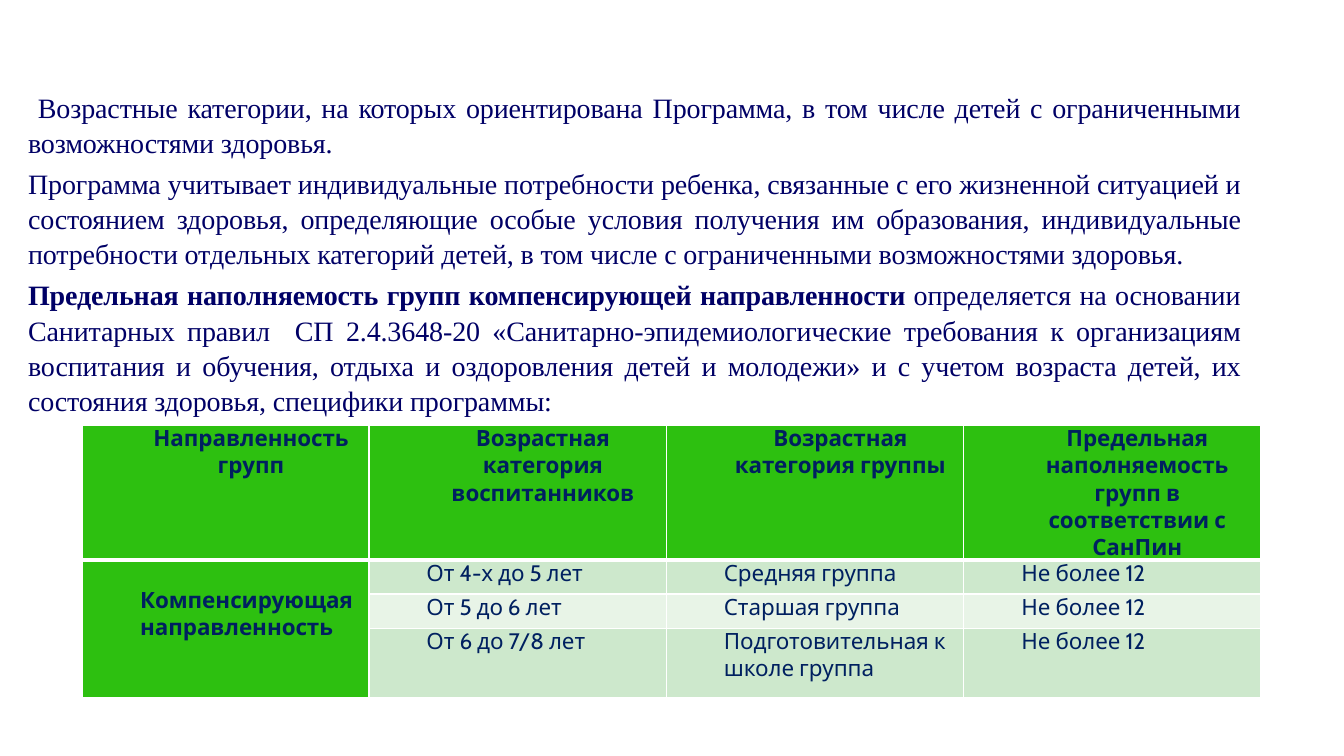
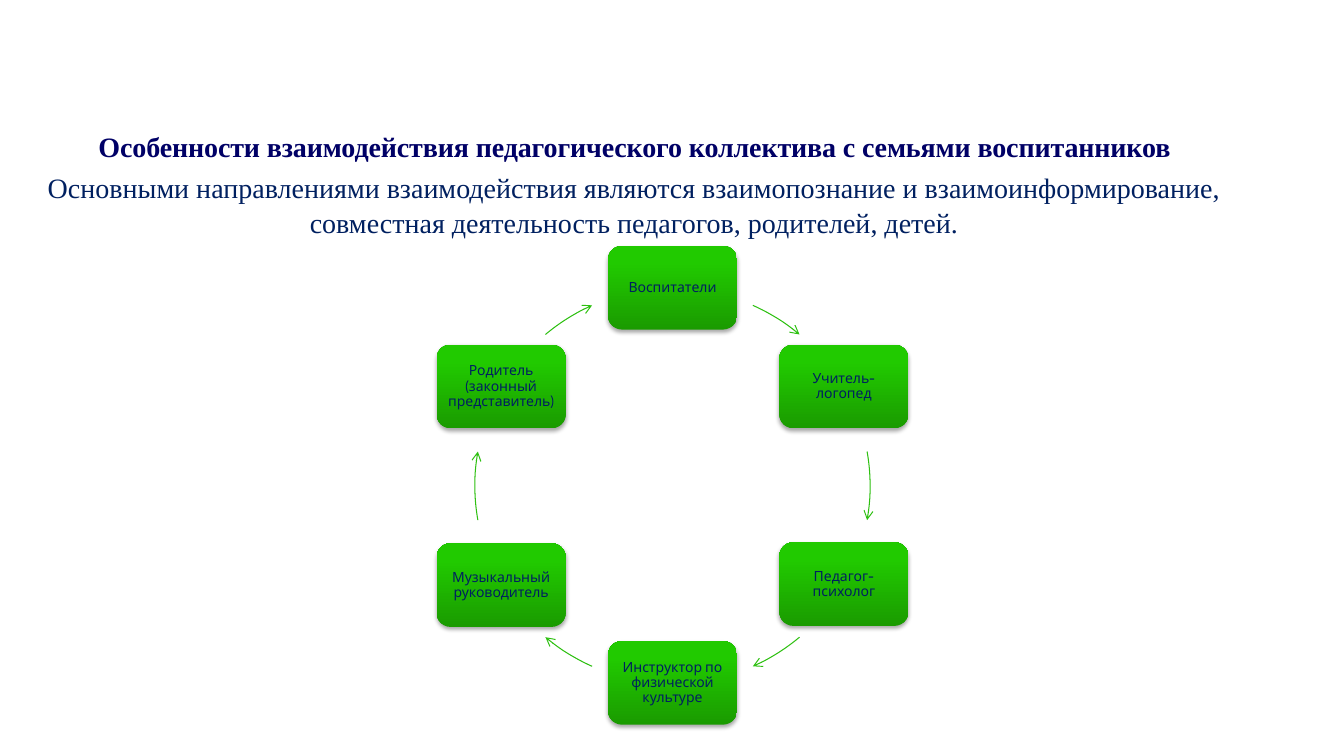
from math import cos, radians, sin

from lxml import etree
from pptx import Presentation
from pptx.dml.color import RGBColor
from pptx.enum.shapes import MSO_SHAPE as SHAPE
from pptx.enum.text import MSO_ANCHOR as ANCHOR, PP_ALIGN as ALIGN
from pptx.oxml import parse_xml
from pptx.oxml.ns import nsdecls, qn
from pptx.util import Pt

PX = 9144  # 100 px to the inch
COLORS = {name: RGBColor.from_string(value) for name, value in {
    "navy": "000066", "ink": "002060", "green": "2DC010",
    "bright": "21CA00", "dark": "1A9B00",
    "band": "CDE8CC", "pale": "E8F4E7",
}.items()}
SERIF, SANS = "Times New Roman", "Cabin"


def set_font(font, name, size, color, bold=False):
    font.name, font.size, font.bold = name, Pt(size), bold
    font.color.rgb = COLORS[color]


def add_body(s, top, height, paragraphs):
    """Add body text; each paragraph is (alignment, colour, spacing, [(text, bold)])."""
    tf = s.shapes.add_textbox(18 * PX, top * PX, 1222 * PX, height * PX).text_frame
    tf.word_wrap = True
    for i, (align, color, spacing, runs) in enumerate(paragraphs):
        p = tf.add_paragraph() if i else tf.paragraphs[0]
        p.alignment, p.line_spacing = align, 1.05
        if i:
            p.space_before = Pt(4)
        for text, bold in runs:
            r = p.add_run()
            r.text = text
            set_font(r.font, SERIF, 20, color, bold)
            r._r.get_or_add_rPr().set("spc", str(spacing))


prs = Presentation()
prs.slide_width, prs.slide_height = 1333 * PX, 750 * PX
blank = prs.slide_layouts[6]

# Slide 1: age categories and group sizes
s = prs.slides.add_slide(blank)
add_body(s, 83, 330, [
    (ALIGN.JUSTIFY, "navy", -10, [
        (" Возрастные категории, на которых ориентирована Программа, в том числе детей "
         "с ограниченными возможностями здоровья.", False)]),
    (ALIGN.JUSTIFY, "navy", -10, [
        ("Программа учитывает индивидуальные потребности ребенка, связанные с его жизненной "
         "ситуацией и состоянием здоровья, определяющие особые условия получения им "
         "образования, индивидуальные потребности отдельных категорий детей, в том числе "
         "с ограниченными возможностями здоровья.", False)]),
    (ALIGN.JUSTIFY, "navy", -10, [
        ("Предельная наполняемость групп компенсирующей направленности ", True),
        ("определяется на основании Санитарных правил  СП 2.4.3648-20 "
         "«Санитарно-эпидемиологические требования к организациям воспитания и обучения, "
         "отдыха и оздоровления детей и молодежи» и с учетом возраста детей, их состояния "
         "здоровья, специфики программы:", False)]),
])

rows = [
    ["Направленность групп", "Возрастная категория воспитанников",
     "Возрастная категория группы",
     "Предельная наполняемость групп в соответствии с СанПин"],
    ["Компенсирующая направленность", "От 4-х до 5 лет", "Средняя группа", "Не более 12"],
    ["", "От 5 до 6 лет", "Старшая группа", "Не более 12"],
    ["", "От 6 до 7/8 лет", "Подготовительная к школе группа", "Не более 12"],
]
widths, heights = [284, 295, 295, 294], [133, 34, 34, 69]
table = s.shapes.add_table(len(rows), len(widths), 82 * PX, 422 * PX,
                           sum(widths) * PX, sum(heights) * PX).table
table.first_row = table.horz_banding = False
for column, width in zip(table.columns, widths):
    column.width = width * PX
for row, height in zip(table.rows, heights):
    row.height = height * PX
table.cell(1, 0).merge(table.cell(3, 0))

for i, texts in enumerate(rows):
    for j, text in enumerate(texts):
        cell = table.cell(i, j)
        heading = i == 0 or j == 0
        cell.margin_left, cell.margin_right = 57 * PX, 7 * PX
        cell.margin_top = cell.margin_bottom = 0
        tcPr = cell._tc.get_or_add_tcPr()
        for side in "LRTB":
            thick = (i, side) in ((0, "B"), (1, "T"))
            tcPr.append(parse_xml(
                f'<a:ln{side} {nsdecls("a")} w="{Pt(3 if thick else 1)}">'
                f'<a:solidFill><a:srgbClr val="FFFFFF"/></a:solidFill></a:ln{side}>'))
        cell.fill.solid()
        cell.fill.fore_color.rgb = COLORS["green" if heading else "band" if i % 2 else "pale"]
        if text:
            p = cell.text_frame.paragraphs[0]
            p.text = text
            p.alignment = ALIGN.LEFT if i else ALIGN.CENTER
            set_font(p.font, SANS, 16, "ink", heading)
table.cell(1, 0).margin_top = 27 * PX

# Slide 2: cycle of cooperation with families
s = prs.slides.add_slide(blank)
add_body(s, 122, 120, [
    (ALIGN.CENTER, "navy", -10, [
        ("Особенности взаимодействия педагогического коллектива с семьями воспитанников",
         True)]),
    (ALIGN.CENTER, "ink", 0, [
        ("Основными направлениями взаимодействия являются взаимопознание и "
         "взаимоинформирование, совместная деятельность педагогов, родителей, детей.",
         False)]),
])

CX, CY, RADIUS = 667, 482, 196
NODE_W, NODE_H = 128, 83
roles = ["Воспитатели", "Учитель-логопед", "Педагог-психолог",
         "Инструктор по физической культуре", "Музыкальный руководитель",
         "Родитель (законный представитель)"]
# Clockwise degrees from the top of the circle
arcs = [(24, 40), (80, 100), (140, 156), (204, 220), (260, 280), (320, 336)]

for i, (role, arc_ends) in enumerate(zip(roles, arcs)):
    angle = radians(i * 360 / len(roles))
    left = round(CX + RADIUS * sin(angle) - NODE_W / 2)
    top = round(CY - RADIUS * cos(angle) - NODE_H / 2)
    node = s.shapes.add_shape(SHAPE.ROUNDED_RECTANGLE, left * PX, top * PX,
                              NODE_W * PX, NODE_H * PX)
    node.line.fill.background()
    node.fill.gradient()
    node.fill.gradient_angle = 90
    low, high = node.fill.gradient_stops
    low.color.rgb, high.color.rgb = COLORS["dark"], COLORS["bright"]
    low.position, high.position = 0, 0.8
    node.shadow.inherit = False
    node._element.spPr.find(qn("a:effectLst")).append(parse_xml(
        f'<a:outerShdw {nsdecls("a")} blurRad="40000" dist="23000" dir="5400000" '
        'rotWithShape="0"><a:srgbClr val="000000"><a:alpha val="35000"/></a:srgbClr>'
        '</a:outerShdw>'))
    tf = node.text_frame
    tf.word_wrap, tf.vertical_anchor = True, ANCHOR.MIDDLE
    tf.margin_left = tf.margin_right = tf.margin_top = tf.margin_bottom = 4 * PX
    p = tf.paragraphs[0]
    p.text, p.alignment, p.line_spacing = role, ALIGN.CENTER, 0.9
    set_font(p.font, SANS, 10, "ink")

    arc = s.shapes.add_shape(SHAPE.ARC, (CX - RADIUS) * PX, (CY - RADIUS) * PX,
                             2 * RADIUS * PX, 2 * RADIUS * PX)
    for k, degrees in enumerate(arc_ends):
        arc.adjustments[k] = (degrees - 90) % 360 * 0.6
    arc.shadow.inherit = False
    arc.fill.background()
    arc.line.color.rgb, arc.line.width = COLORS["green"], Pt(0.75)
    etree.SubElement(arc.line._get_or_add_ln(), qn("a:tailEnd"), type="arrow")

prs.save("out.pptx")
